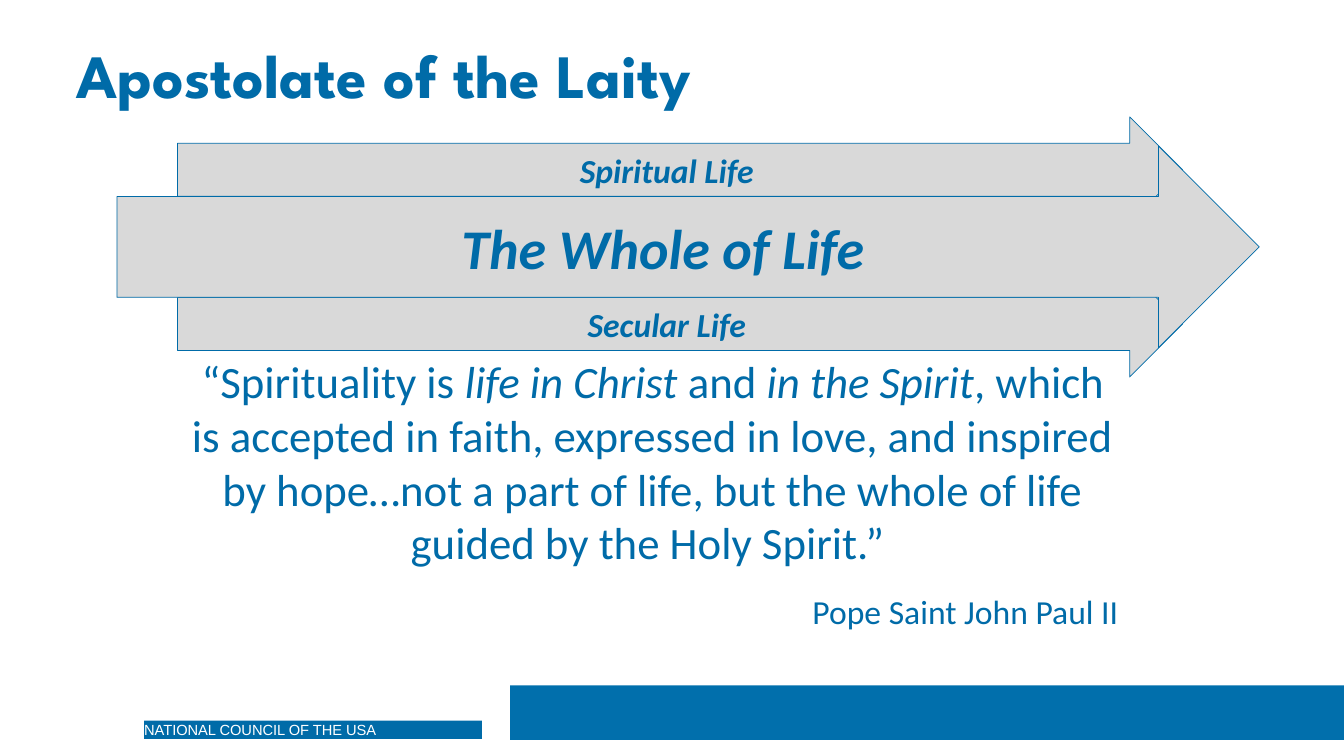
from dataclasses import dataclass
from pptx import Presentation
from pptx.dml.color import RGBColor
from pptx.enum.shapes import MSO_SHAPE as Shape
from pptx.enum.text import MSO_ANCHOR as Anchor, PP_ALIGN as Align
from pptx.util import Inches, Pt


@dataclass(frozen=True)
class Theme:
    blue: str = "006BA8"
    band: str = "016FAC"
    grey: str = "D9D9D9"
    white: str = "FFFFFF"
    heading: str = "League Spartan"
    body: str = "Calibri"
    small: str = "Arial"
    title: float = 44
    main: float = 40
    quote: float = 32
    label: float = 24
    footer: float = 10.5
    outline: float = 0.5


THEME = Theme()
WIDTH, HEIGHT = 13.33, 7.5
LANE_LEFT, LANE_WIDTH, LANE_HEIGHT = 1.76, 9.97, 1.05
MAIN_TOP, MAIN_HEIGHT = 1.45, 2
LANE_OFFSET = 0.765
MAIN_MIDDLE = MAIN_TOP + MAIN_HEIGHT / 2

TITLE = "Apostolate of the Laity"
COUNCIL = "NATIONAL COUNCIL OF THE USA"
LANES = [("Spiritual Life", -1), ("Secular Life", 1)]
WHOLE = "The Whole of Life"
QUOTE = [
    ("“Spirituality is ", False),
    ("life in Christ", True),
    (" and ", False),
    ("in the Spirit", True),
    (", which is accepted in faith, expressed in love, and inspired by hope…"
     "not a part of life, but the whole of life guided by the Holy Spirit.” ", False),
]
AUTHOR = "Pope Saint John Paul II"

deck = Presentation()
deck.slide_width, deck.slide_height = Inches(WIDTH), Inches(HEIGHT)
slide = deck.slides.add_slide(deck.slide_layouts[6])


def style(paragraph, size, face=THEME.body, color=THEME.blue, bold=None, italic=None, align=Align.LEFT):
    paragraph.alignment = align
    font = paragraph.font
    font.size, font.name, font.bold, font.italic = Pt(size), face, bold, italic
    font.color.rgb = RGBColor.from_string(color)


def add_block(kind, left, top, width, height, fill, line=None):
    block = slide.shapes.add_shape(kind, *map(Inches, (left, top, width, height)))
    block.shadow.inherit = False
    block.fill.solid()
    block.fill.fore_color.rgb = RGBColor.from_string(fill)
    if line:
        block.line.color.rgb = RGBColor.from_string(line)
        block.line.width = Pt(THEME.outline)
    else:
        block.line.fill.background()
    return block


def add_text(left, top, width, height):
    frame = slide.shapes.add_textbox(*map(Inches, (left, top, width, height))).text_frame
    frame.word_wrap = True
    return frame


def add_arrow(label, left, middle, width, height, size):
    arrow = add_block(Shape.RIGHT_ARROW, left, middle - height / 2, width, height, THEME.grey, THEME.blue)
    frame = arrow.text_frame
    frame.vertical_anchor = Anchor.MIDDLE
    frame.text = label
    style(frame.paragraphs[0], size, bold=True, italic=True, align=Align.CENTER)


add_block(Shape.RECTANGLE, 5.06, 6.8, WIDTH - 5.06, 0.54, THEME.band)

council = add_block(Shape.RECTANGLE, 1.43, 7.15, 3.35, 0.18, THEME.blue).text_frame
council.margin_left = council.margin_right = council.margin_top = council.margin_bottom = 0
council.vertical_anchor = Anchor.TOP
council.text = COUNCIL
style(council.paragraphs[0], THEME.footer, THEME.small, THEME.white)

title = add_text(0.66, 0.35, 10.67, 0.85)
title.vertical_anchor = Anchor.MIDDLE
title.text = TITLE
style(title.paragraphs[0], THEME.title, THEME.heading, bold=True)
title.paragraphs[0].line_spacing = 0.9

for lane, side in LANES:
    add_arrow(lane, LANE_LEFT, MAIN_MIDDLE + side * LANE_OFFSET, LANE_WIDTH, LANE_HEIGHT, THEME.label)

passage = add_text(LANE_LEFT, 3.46, 9.43, 2.88)
quote = passage.paragraphs[0]
style(quote, THEME.quote, align=Align.CENTER)
for words, italic in QUOTE:
    run = quote.add_run()
    run.text = words
    run.font.italic = italic
author = passage.add_paragraph()
author.text = AUTHOR
author.space_before = Pt(16)
style(author, THEME.label, align=Align.RIGHT)

add_arrow(WHOLE, 1.16, MAIN_MIDDLE, 11.33, MAIN_HEIGHT, THEME.main)

deck.save("out.pptx")
